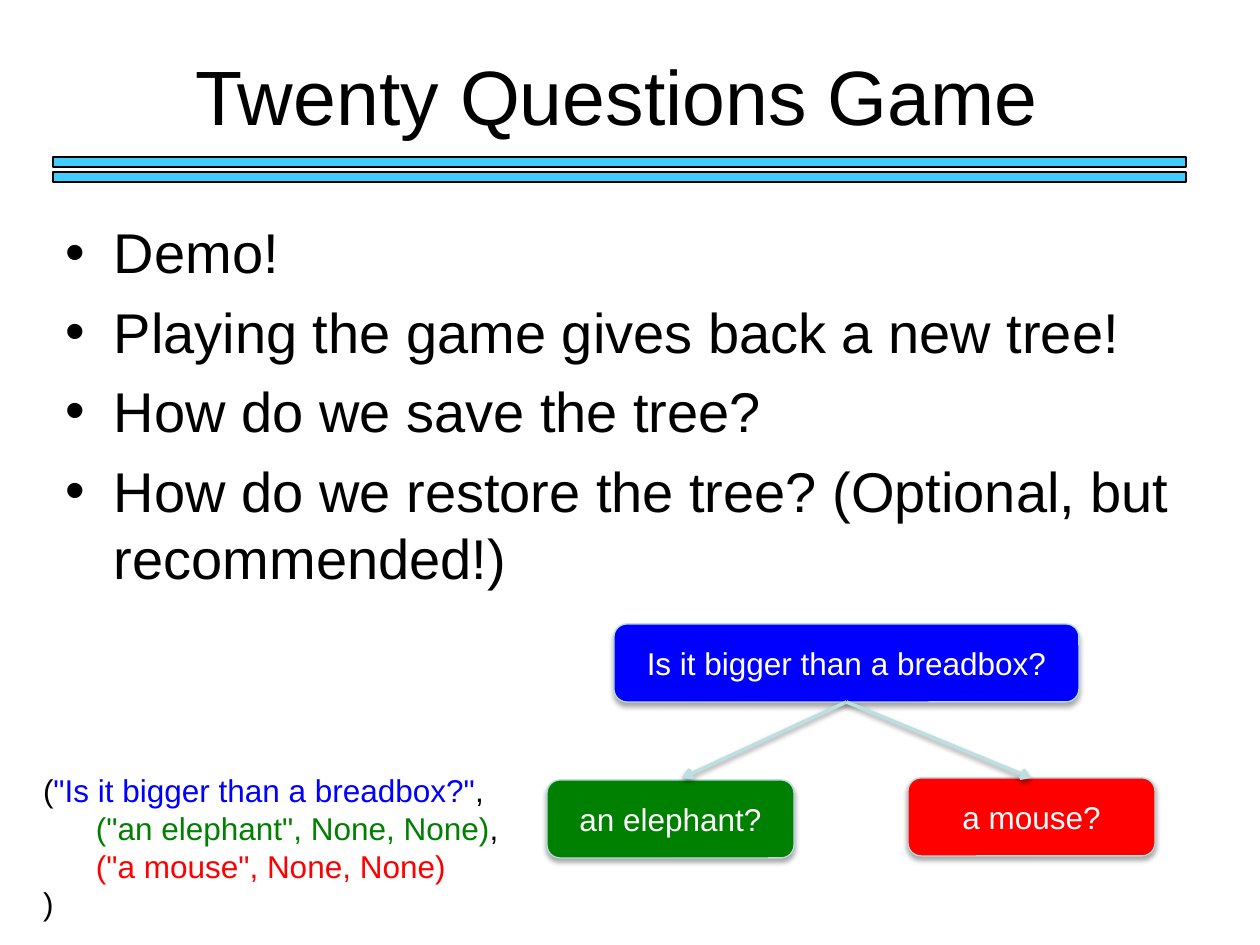
"""Build the Twenty Questions Game slide with its decision tree."""
from dataclasses import dataclass
from typing import Optional

from lxml.etree import SubElement
from pptx import Presentation
from pptx.dml.color import RGBColor
from pptx.enum.shapes import MSO_CONNECTOR as Connector, MSO_SHAPE as Preset
from pptx.enum.text import MSO_ANCHOR as Anchor, PP_ALIGN as Align
from pptx.oxml.ns import qn
from pptx.util import Emu, Pt

PX = 914400 / 126
COLORS = {
    "black": "000000", "white": "FFFFFF", "sky": "42CBFD", "blue": "0000FF",
    "green": "008000", "red": "FF0000", "outline": "B7DBDE", "arrow": "BCDFE2",
}


@dataclass(frozen=True)
class Box:
    left: int
    top: int
    width: int
    height: int


@dataclass(frozen=True)
class Node:
    text: str
    color: str
    box: Box


@dataclass(frozen=True)
class Branch:
    end: tuple[int, int]
    child: Optional[int] = None


@dataclass(frozen=True)
class Line:
    runs: tuple[tuple[str, str], ...]
    margin: int = 0
    hanging: int = 0
    before: int = 0
    bullet: str = ""


TITLE = Line((("Twenty Questions Game", "black"),))
BULLETS = [
    Line(((text, "black"),), margin=53, hanging=48, before=7, bullet="•")
    for text in (
        "Demo!",
        "Playing the game gives back a new tree!",
        "How do we save the tree?",
        "How do we restore the tree? (Optional, but recommended!)",
    )
]
TUPLE_LINES = [
    Line((("(", "black"), ('"Is it bigger than a breadbox?"', "blue"), (",", "black"))),
    Line((('("an elephant", None, None)', "green"), (",", "black")), margin=53),
    Line((('("a mouse", None, None)', "red"),), margin=53),
    Line(((")", "black"),)),
]
RULES = [Box(53, top, 1133, 10) for top in (157, 172)]
NODES = [
    Node("Is it bigger than a breadbox?", "blue", Box(614, 624, 465, 78)),
    Node("an elephant?", "green", Box(547, 780, 247, 78)),
    Node("a mouse?", "red", Box(908, 778, 247, 78)),
]
BRANCHES = [Branch((682, 778)), Branch((1032, 778), child=2)]
HEADING_INSETS = (8, 8, 13, 8)
PLAIN_INSETS = (13, 6, 13, 6)


def px(length: int) -> Emu:
    """Turn pixels into EMU."""
    return Emu(round(length * PX))


def place(box: Box) -> tuple[Emu, ...]:
    """Give the position and size of a box in EMU."""
    return px(box.left), px(box.top), px(box.width), px(box.height)


def color(name: str) -> RGBColor:
    """Look up a named colour."""
    return RGBColor.from_string(COLORS[name])


def write(frame, lines: list[Line], size: int, align=Align.LEFT, anchor=Anchor.TOP) -> None:
    """Fill a text frame with lines, run by run."""
    frame.word_wrap = True
    frame.vertical_anchor = anchor
    for index, line in enumerate(lines):
        paragraph = frame.add_paragraph() if index else frame.paragraphs[0]
        paragraph.alignment = align
        paragraph.space_before = Pt(line.before)
        properties = paragraph._p.get_or_add_pPr()
        properties.set("marL", str(px(line.margin)))
        properties.set("indent", str(px(-line.hanging)))
        if line.bullet:
            SubElement(properties, qn("a:buFont"), typeface="Arial")
            SubElement(properties, qn("a:buChar"), char=line.bullet)
        for text, name in line.runs:
            run = paragraph.add_run()
            run.text = text
            run.font.name = "Arial"
            run.font.size = Pt(size)
            run.font.color.rgb = color(name)


def add_text(slide, box: Box, lines: list[Line], size: int,
             insets: tuple[int, ...] = PLAIN_INSETS, **layout) -> None:
    """Add a text box with insets given as left, top, right, bottom."""
    frame = slide.shapes.add_textbox(*place(box)).text_frame
    (frame.margin_left, frame.margin_top,
     frame.margin_right, frame.margin_bottom) = map(px, insets)
    write(frame, lines, size, **layout)


def add_block(slide, preset, box: Box, fill: str, outline: str):
    """Add a filled and outlined shape without a shadow."""
    shape = slide.shapes.add_shape(preset, *place(box))
    shape.shadow.inherit = False
    shape.fill.solid()
    shape.fill.fore_color.rgb = color(fill)
    shape.line.color.rgb = color(outline)
    shape.line.width = Pt(0.75)
    return shape


def add_shadow(shape, distance: float, opacity: int) -> None:
    """Give a shape or connector a soft shadow straight below."""
    properties = shape._element.spPr
    effects = properties.find(qn("a:effectLst"))
    if effects is None:
        effects = SubElement(properties, qn("a:effectLst"))
    shadow = SubElement(effects, qn("a:outerShdw"), blurRad=str(Pt(3.1)),
                        dist=str(Pt(distance)), dir="5400000", rotWithShape="0")
    tint = SubElement(shadow, qn("a:srgbClr"), val=COLORS["black"])
    SubElement(tint, qn("a:alpha"), val=str(opacity * 1000))


def add_node(slide, node: Node):
    """Add one rounded tree node."""
    shape = add_block(slide, Preset.ROUNDED_RECTANGLE, node.box, node.color, "outline")
    add_shadow(shape, 1.8, 35)
    write(shape.text_frame, [Line(((node.text, "white"),))], 18, Align.CENTER, Anchor.MIDDLE)
    return shape


def add_branch(slide, branch: Branch, shapes: list) -> None:
    """Draw an arrow from the root node towards an answer."""
    root = NODES[0].box
    start = px(root.left + root.width // 2), px(root.top + root.height)
    end = (px(value) for value in branch.end)
    connector = slide.shapes.add_connector(Connector.STRAIGHT, *start, *end)
    connector.begin_connect(shapes[0], 2)
    if branch.child is not None:
        connector.end_connect(shapes[branch.child], 0)
    connector.line.color.rgb = color("arrow")
    connector.line.width = Pt(2)
    SubElement(connector.line._get_or_add_ln(), qn("a:tailEnd"), type="arrow")
    add_shadow(connector, 1.6, 38)


def main() -> None:
    """Build and save the slide."""
    presentation = Presentation()
    presentation.slide_width, presentation.slide_height = px(1260), px(945)
    slide = presentation.slides.add_slide(presentation.slide_layouts[6])
    add_text(slide, Box(53, 42, 1133, 105), [TITLE], 44, HEADING_INSETS,
             align=Align.CENTER, anchor=Anchor.MIDDLE)
    add_text(slide, Box(53, 210, 1137, 672), BULLETS, 32, HEADING_INSETS)
    for rule in RULES:
        add_block(slide, Preset.RECTANGLE, rule, "sky", "black")
    shapes = [add_node(slide, node) for node in NODES]
    for branch in BRANCHES:
        add_branch(slide, branch, shapes)
    add_text(slide, Box(30, 765, 483, 165), TUPLE_LINES, 18)
    presentation.save("out.pptx")


if __name__ == "__main__":
    main()
